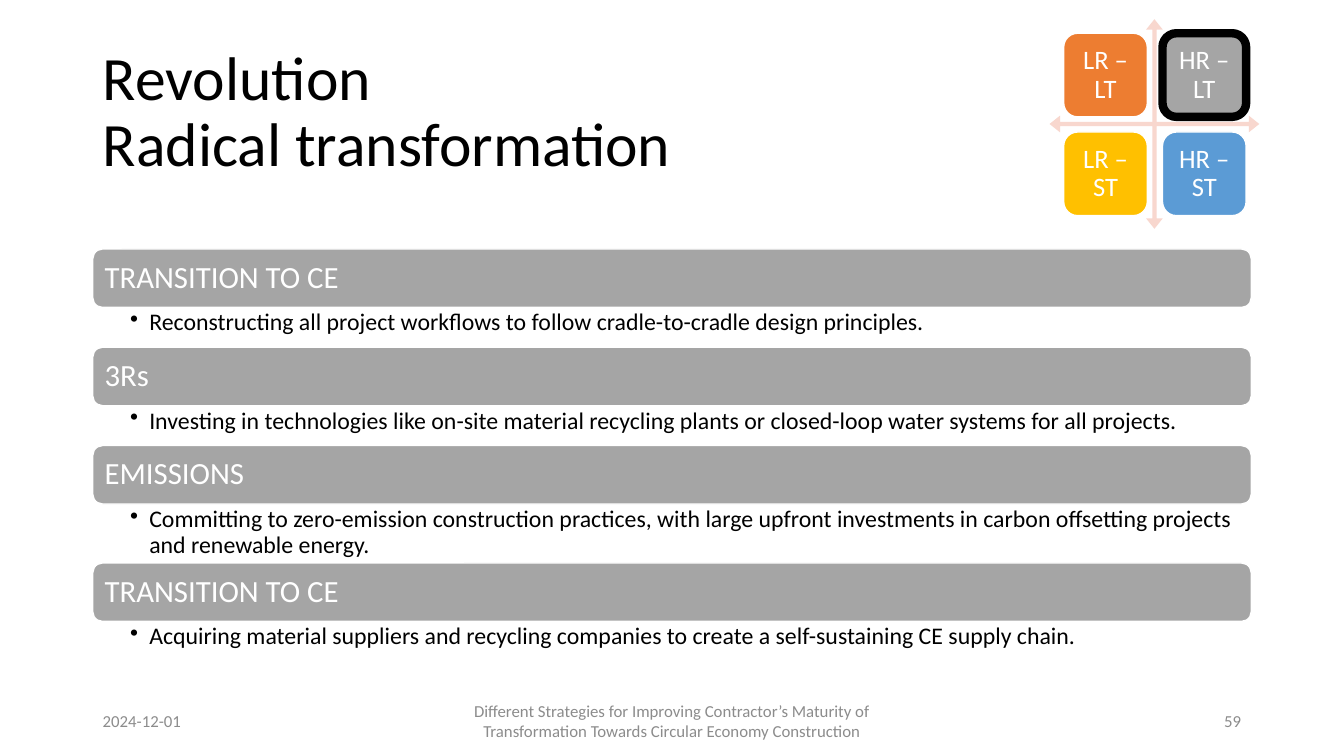
from dataclasses import dataclass

from lxml.etree import SubElement
from pptx import Presentation
from pptx.dml.color import RGBColor
from pptx.enum.shapes import MSO_SHAPE
from pptx.enum.text import MSO_ANCHOR, MSO_AUTO_SIZE, PP_ALIGN
from pptx.oxml.ns import qn
from pptx.util import Inches, Pt


@dataclass(frozen=True)
class Theme:
    font: str = "Calibri"
    black: str = "000000"
    white: str = "FFFFFF"
    gray: str = "A5A5A5"
    muted: str = "8C8C8C"
    orange: str = "ED7D31"
    yellow: str = "FFC000"
    blue: str = "5B9BD5"
    arrow: str = "F8D7CE"
    title_size: int = 44
    bar_size: int = 22
    tile_size: int = 19
    bullet_size: int = 17
    footer_size: int = 12


THEME = Theme()
SLIDE_WIDTH, SLIDE_HEIGHT = 13.33, 7.5
MARGIN = 0.92
CONTENT_WIDTH = SLIDE_WIDTH - 2 * MARGIN

STRATEGY_TOP = 2.47
BAR_HEIGHT = 0.58
ONE_LINE, TWO_LINES = 0.4, 0.59
STRATEGIES = [
    ("TRANSITION TO CE", ONE_LINE,
     "Reconstructing all project workflows to follow cradle-to-cradle design principles."),
    ("3Rs", ONE_LINE,
     "Investing in technologies like on-site material recycling plants or closed-loop "
     "water systems for all projects."),
    ("EMISSIONS", TWO_LINES,
     "Committing to zero-emission construction practices, with large upfront investments "
     "in carbon offsetting projects and renewable energy."),
    ("TRANSITION TO CE", ONE_LINE,
     "Acquiring material suppliers and recycling companies to create a self-sustaining "
     "CE supply chain."),
]

MATRIX_LEFT, MATRIX_TOP, MATRIX_SIZE = 10.41, 0.19, 2.08
TILE_INSET, TILE_SIZE, TILE_PITCH = 0.14, 0.83, 0.98
TILES = [
    [("LR – LT", THEME.orange), ("HR – LT", THEME.gray)],
    [("LR – ST", THEME.yellow), ("HR – ST", THEME.blue)],
]
CURRENT_TILE = "HR – LT"

FOOTER_TOP, FOOTER_HEIGHT = 6.95, 0.4
FOOTERS = [
    (MARGIN, 3, PP_ALIGN.LEFT, "2024-12-01"),
    ((SLIDE_WIDTH - 4.5) / 2, 4.5, PP_ALIGN.CENTER,
     "Different Strategies for Improving Contractor’s Maturity of "
     "Transformation Towards Circular Economy Construction"),
    (SLIDE_WIDTH - MARGIN - 3, 3, PP_ALIGN.RIGHT, "59"),
]


def box(left, top, width, height):
    return [Inches(length) for length in (left, top, width, height)]


def add_run(paragraph, text, size, color):
    run = paragraph.add_run()
    run.text = text
    run.font.name = THEME.font
    run.font.size = Pt(size)
    run.font.color.rgb = RGBColor.from_string(color)


def prepare_text(shape, insets=(0.1, 0.05, 0.1, 0.05), anchor=MSO_ANCHOR.MIDDLE,
                 align=PP_ALIGN.LEFT, line_spacing=0.9):
    """Format the shape's text frame and return its first paragraph."""
    frame = shape.text_frame
    frame.word_wrap = True
    frame.auto_size = MSO_AUTO_SIZE.NONE
    frame.vertical_anchor = anchor
    (frame.margin_left, frame.margin_top,
     frame.margin_right, frame.margin_bottom) = [Inches(inset) for inset in insets]
    paragraph = frame.paragraphs[0]
    paragraph.alignment = align
    paragraph.line_spacing = line_spacing
    return paragraph


def add_filled_shape(slide, kind, bounds, fill, line=None, line_width=1):
    shape = slide.shapes.add_shape(kind, *box(*bounds))
    shape.shadow.inherit = False
    shape.fill.solid()
    shape.fill.fore_color.rgb = RGBColor.from_string(fill)
    if line:
        shape.line.color.rgb = RGBColor.from_string(line)
        shape.line.width = Pt(line_width)
    else:
        shape.line.fill.background()
    return shape


def add_title(slide, *lines):
    title = slide.shapes.title
    title.left, title.top, title.width, title.height = box(MARGIN, 0.4, CONTENT_WIDTH, 1.45)
    paragraph = prepare_text(title)
    for index, line in enumerate(lines):
        if index:
            paragraph.add_line_break()
        add_run(paragraph, line, THEME.title_size, THEME.black)


def add_bar(slide, top, heading):
    bar = add_filled_shape(slide, MSO_SHAPE.ROUNDED_RECTANGLE,
                           (MARGIN, top, CONTENT_WIDTH, BAR_HEIGHT), THEME.gray, THEME.white)
    add_run(prepare_text(bar, insets=[0.09] * 4), heading, THEME.bar_size, THEME.white)


def add_bullet(slide, top, height, text):
    textbox = slide.shapes.add_textbox(*box(MARGIN, top, CONTENT_WIDTH, height))
    paragraph = prepare_text(textbox, (0.37, 0.03, 0.17, 0.03), MSO_ANCHOR.TOP)
    paragraph.level = 1
    properties = paragraph._p.get_or_add_pPr()
    properties.set("marL", str(Inches(0.19)))
    properties.set("indent", str(-Inches(0.19)))
    SubElement(properties, qn("a:buChar")).set("char", "•")
    add_run(paragraph, text, THEME.bullet_size, THEME.black)


def add_strategies(slide):
    top = STRATEGY_TOP
    for heading, height, text in STRATEGIES:
        add_bar(slide, top, heading)
        add_bullet(slide, top + BAR_HEIGHT, height, text)
        top += BAR_HEIGHT + height - 0.005


def add_footers(slide):
    for left, width, align, text in FOOTERS:
        textbox = slide.shapes.add_textbox(*box(left, FOOTER_TOP, width, FOOTER_HEIGHT))
        paragraph = prepare_text(textbox, align=align, line_spacing=1.0)
        add_run(paragraph, text, THEME.footer_size, THEME.muted)


def add_matrix(slide):
    arrows = add_filled_shape(slide, MSO_SHAPE.QUAD_ARROW,
                              (MATRIX_LEFT, MATRIX_TOP, MATRIX_SIZE, MATRIX_SIZE), THEME.arrow)
    for index, share in enumerate((0.02, 0.04, 0.05)):
        arrows.adjustments[index] = share
    for row, tiles in enumerate(TILES):
        for column, (label, fill) in enumerate(tiles):
            line, line_width = (THEME.black, 6) if label == CURRENT_TILE else (THEME.white, 1)
            bounds = (MATRIX_LEFT + TILE_INSET + column * TILE_PITCH,
                      MATRIX_TOP + TILE_INSET + row * TILE_PITCH, TILE_SIZE, TILE_SIZE)
            tile = add_filled_shape(slide, MSO_SHAPE.ROUNDED_RECTANGLE, bounds,
                                    fill, line, line_width)
            paragraph = prepare_text(tile, insets=[0.08] * 4, align=PP_ALIGN.CENTER)
            add_run(paragraph, label, THEME.tile_size, THEME.white)


def main():
    presentation = Presentation()
    presentation.slide_width = Inches(SLIDE_WIDTH)
    presentation.slide_height = Inches(SLIDE_HEIGHT)
    slide = presentation.slides.add_slide(presentation.slide_layouts.get_by_name("Title Only"))
    add_title(slide, "Revolution", "Radical transformation")
    add_strategies(slide)
    add_footers(slide)
    add_matrix(slide)
    presentation.save("out.pptx")


if __name__ == "__main__":
    main()
